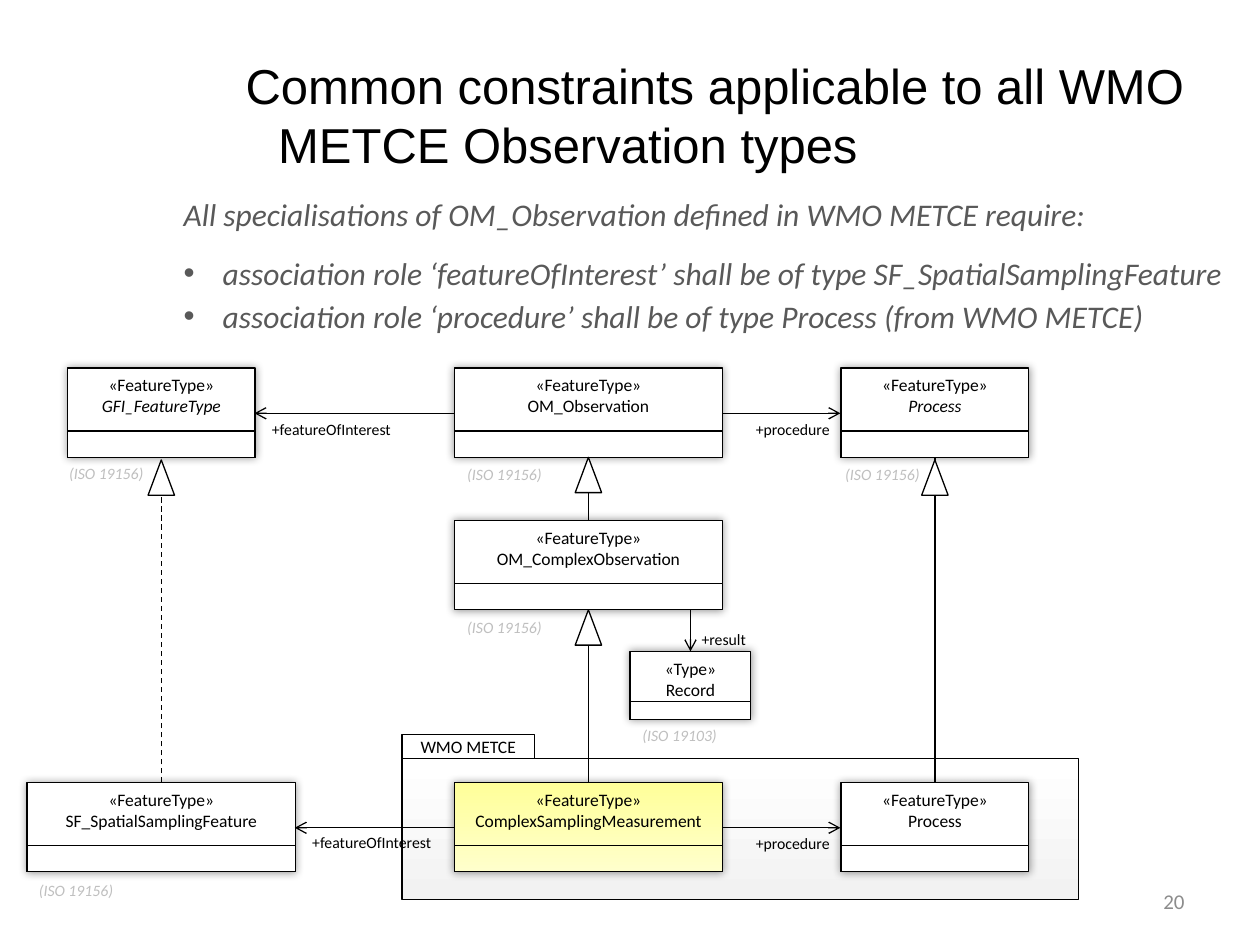
from lxml import etree
from pptx import Presentation
from pptx.dml.color import RGBColor
from pptx.enum.dml import MSO_LINE
from pptx.enum.shapes import MSO_CONNECTOR, MSO_SHAPE
from pptx.enum.text import MSO_ANCHOR, MSO_AUTO_SIZE, PP_ALIGN
from pptx.oxml import parse_xml
from pptx.oxml.ns import nsdecls, qn
from pptx.util import Inches, Pt

RECTANGLE = MSO_SHAPE.RECTANGLE
TRIANGLE = MSO_SHAPE.ISOSCELES_TRIANGLE
STRAIGHT = MSO_CONNECTOR.STRAIGHT
DASH = MSO_LINE.DASH
MIDDLE = MSO_ANCHOR.MIDDLE
FIT_SHAPE = MSO_AUTO_SIZE.SHAPE_TO_FIT_TEXT
CENTER, RIGHT = PP_ALIGN.CENTER, PP_ALIGN.RIGHT

BLACK = RGBColor(0x00, 0x00, 0x00)
WHITE = RGBColor(0xFF, 0xFF, 0xFF)
PALE_GRAY = RGBColor(0xF2, 0xF2, 0xF2)
PALE_YELLOW = RGBColor(0xFF, 0xFF, 0xCC)
YELLOW = RGBColor(0xFF, 0xFF, 0x99)
NOTE_GRAY = RGBColor(0xBF, 0xBF, 0xBF)
NUMBER_GRAY = RGBColor(0x8C, 0x8C, 0x8C)
BODY_GRAY = RGBColor(0x59, 0x59, 0x59)

TITLE = "Common constraints applicable to all WMO METCE Observation types"
REQUIREMENTS = [
    ("All specialisations of OM_Observation defined in WMO METCE require:", False, 12),
    ("association role ‘featureOfInterest’ shall be of type SF_SpatialSamplingFeature", True, 3),
    ("association role ‘procedure’ shall be of type Process (from WMO METCE)", True, 12),
]
PAGE_NUMBER = "20"

WIDE, NARROW, CLASS_HEIGHT, COMPARTMENT = 2.13, 1.49, 0.71, 0.21
FEATURE_X, OBSERVATION_X, PROCESS_X, RESULT_X = 1.28, 4.67, 7.42, 5.48
TOP_ROW, MIDDLE_ROW, BOTTOM_ROW, RECORD_ROW = 2.92, 4.13, 6.21, 5.17
ARROW_DROP = 0.36
FEATURE, TYPE = "«FeatureType»", "«Type»"

# center x, top, width, height, compartment, stereotype, name, abstract, fills
CLASSES = [
    (OBSERVATION_X, MIDDLE_ROW, WIDE, CLASS_HEIGHT, COMPARTMENT, FEATURE, "OM_ComplexObservation", False, [WHITE]),
    (RESULT_X, RECORD_ROW, 0.96, 0.54, 0.14, TYPE, "Record", False, [WHITE]),
    (OBSERVATION_X, BOTTOM_ROW, WIDE, CLASS_HEIGHT, COMPARTMENT, FEATURE, "ComplexSamplingMeasurement", False,
     [PALE_YELLOW, YELLOW]),
    (PROCESS_X, BOTTOM_ROW, NARROW, CLASS_HEIGHT, COMPARTMENT, FEATURE, "Process", False, [WHITE]),
    (OBSERVATION_X, TOP_ROW, WIDE, CLASS_HEIGHT, COMPARTMENT, FEATURE, "OM_Observation", False, [WHITE]),
    (PROCESS_X, TOP_ROW, NARROW, CLASS_HEIGHT, COMPARTMENT, FEATURE, "Process", True, [WHITE]),
    (FEATURE_X, TOP_ROW, NARROW, CLASS_HEIGHT, COMPARTMENT, FEATURE, "GFI_FeatureType", True, [WHITE]),
    (FEATURE_X, BOTTOM_ROW, WIDE, CLASS_HEIGHT, COMPARTMENT, FEATURE, "SF_SpatialSamplingFeature", False, [WHITE]),
]
ASSOCIATIONS = [
    (RESULT_X, MIDDLE_ROW + CLASS_HEIGHT, RESULT_X, RECORD_ROW),
] + [
    (start, row + ARROW_DROP, end, row + ARROW_DROP)
    for row, feature_edge in ((TOP_ROW, 2.02), (BOTTOM_ROW, 2.34))
    for start, end in ((5.73, 6.67), (3.61, feature_edge))
]
# x, child top, parent bottom, triangle top, dashed
GENERALIZATIONS = [
    (OBSERVATION_X, BOTTOM_ROW, 4.84, 4.84, False),
    (OBSERVATION_X, MIDDLE_ROW, 3.63, 3.63, False),
    (PROCESS_X, BOTTOM_ROW, 3.63, 3.65, False),
    (FEATURE_X, BOTTOM_ROW, 3.63, 3.65, True),
]
ROLES = [
    ("+result", 5.47, 4.95, 0.56),
    ("+procedure", 5.9, 6.57, 0.8),
    ("+procedure", 5.9, 3.28, 0.8),
    ("+featureOfInterest", 2.06, 3.28, 1.17),
    ("+featureOfInterest", 2.38, 6.56, 1.17),
]
SOURCES = [
    ("(ISO 19156)", 3.61, 4.85, 0.8),
    ("(ISO 19103)", 5, 5.71, 0.79),
    ("(ISO 19156)", 3.61, 3.64, 0.8),
    ("(ISO 19156)", 6.61, 3.64, 0.8),
    ("(ISO 19156)", 0.45, 3.63, 0.8),
    ("(ISO 19156)", 0.21, 6.94, 0.8),
]


def style_paragraph(paragraph, size, color=BLACK, italic=False, font="Calibri"):
    for run in paragraph.runs:
        run.font.name = font
        run.font.size = Pt(size)
        run.font.color.rgb = color
        run.font.italic = italic


def add_text(slide, text, left, top, width, height, size, color=BLACK, italic=False, font="Calibri", wrap=True):
    box = slide.shapes.add_textbox(Inches(left), Inches(top), Inches(width), Inches(height))
    frame = box.text_frame
    frame.word_wrap = wrap
    frame.text = text
    for paragraph in frame.paragraphs:
        style_paragraph(paragraph, size, color, italic, font)
    return frame


def add_label(slide, text, left, top, width, color, italic):
    frame = add_text(slide, text, left, top, width, 0.25, 9, color, italic, wrap=False)
    frame.auto_size = FIT_SHAPE


def add_outlined(slide, kind, left, top, width, height, fills):
    shape = slide.shapes.add_shape(kind, Inches(left), Inches(top), Inches(width), Inches(height))
    shape.shadow.inherit = False
    shape.line.color.rgb = BLACK
    shape.line.width = Pt(0.75)
    if len(fills) == 2:
        shape.fill.gradient()
        shape.fill.gradient_angle = 90
        for stop, color in zip(shape.fill.gradient_stops, fills):
            stop.color.rgb = color
    elif fills:
        shape.fill.solid()
        shape.fill.fore_color.rgb = fills[0]
    else:
        shape.fill.background()
    return shape


def add_glow_shadow(shape):
    effects = shape._element.spPr.find(qn("a:effectLst"))
    effects.append(parse_xml(
        f'<a:outerShdw {nsdecls("a")} blurRad="63500" dist="0" dir="0" algn="ctr" rotWithShape="0">'
        '<a:srgbClr val="000000"><a:alpha val="40000"/></a:srgbClr></a:outerShdw>'))


def add_class(slide, center, top, width, height, compartment, stereotype, name, abstract, fills):
    left = center - width / 2
    shape = add_outlined(slide, RECTANGLE, left, top, width, height, fills)
    add_glow_shadow(shape)
    frame = shape.text_frame
    frame.text = f"{stereotype}\n{name}"
    frame.vertical_anchor = MSO_ANCHOR.TOP
    for paragraph, italic in zip(frame.paragraphs, (False, abstract)):
        paragraph.alignment = CENTER
        style_paragraph(paragraph, 10, italic=italic)
    lower_fills = fills if len(fills) == 1 else []
    add_outlined(slide, RECTANGLE, left, top + height - compartment, width, compartment, lower_fills)


def add_line(slide, start_x, start_y, end_x, end_y, arrow=False, dashed=False):
    line = slide.shapes.add_connector(STRAIGHT, Inches(start_x), Inches(start_y), Inches(end_x), Inches(end_y))
    line.line.color.rgb = BLACK
    line.line.width = Pt(0.75)
    if dashed:
        line.line.dash_style = DASH
    if arrow:
        etree.SubElement(line.line._get_or_add_ln(), qn("a:tailEnd"), type="arrow")
    etree.SubElement(line._element.spPr, qn("a:effectLst"))


def set_indent(paragraph, indent):
    properties = paragraph._p.get_or_add_pPr()
    properties.set("marL", str(Inches(indent)))
    properties.set("indent", str(-Inches(indent)))
    return properties


def main():
    presentation = Presentation()
    presentation.slide_width, presentation.slide_height = Inches(10), Inches(7.5)
    slide = presentation.slides.add_slide(presentation.slide_layouts[6])

    number = add_text(slide, PAGE_NUMBER, 7.17, 6.95, 2.33, 0.4, 12, NUMBER_GRAY)
    number.vertical_anchor = MIDDLE
    number.paragraphs[0].alignment = RIGHT

    title = add_text(slide, TITLE, 1.85, 0.35, 8.15, 0.75, 28, font="Arial")
    title.margin_top = Inches(0.09)
    set_indent(title.paragraphs[0], 0.26)

    add_outlined(slide, RECTANGLE, 3.19, 6.02, 5.37, 1.12, [PALE_GRAY, WHITE])
    tab = add_outlined(slide, RECTANGLE, 3.19, 5.83, 1.05, 0.19, [WHITE]).text_frame
    tab.margin_top = tab.margin_bottom = 0
    tab.vertical_anchor = MIDDLE
    tab.text = "WMO METCE"
    tab.paragraphs[0].alignment = CENTER
    style_paragraph(tab.paragraphs[0], 10)

    for details in CLASSES:
        add_class(slide, *details)
    for ends in ASSOCIATIONS:
        add_line(slide, *ends, arrow=True)
    for x, child_top, parent_bottom, triangle_top, dashed in GENERALIZATIONS:
        add_line(slide, x, child_top, x, parent_bottom, dashed=dashed)
        add_outlined(slide, TRIANGLE, x - 0.105, triangle_top, 0.21, 0.28, [WHITE])
    for role in ROLES:
        add_label(slide, *role, BLACK, False)
    for source in SOURCES:
        add_label(slide, *source, NOTE_GRAY, True)

    body_text = "\n".join(text for text, _, _ in REQUIREMENTS)
    body = add_text(slide, body_text, 1.36, 1.5, 8.47, 1.22, 18, BODY_GRAY, True)
    body.auto_size = FIT_SHAPE
    for paragraph, (_, bulleted, space_after) in zip(body.paragraphs, REQUIREMENTS):
        paragraph.space_after = Pt(space_after)
        if bulleted:
            properties = set_indent(paragraph, 0.31)
            etree.SubElement(properties, qn("a:buFont"), typeface="Arial")
            etree.SubElement(properties, qn("a:buChar"), char="•")

    presentation.save("out.pptx")


if __name__ == "__main__":
    main()
